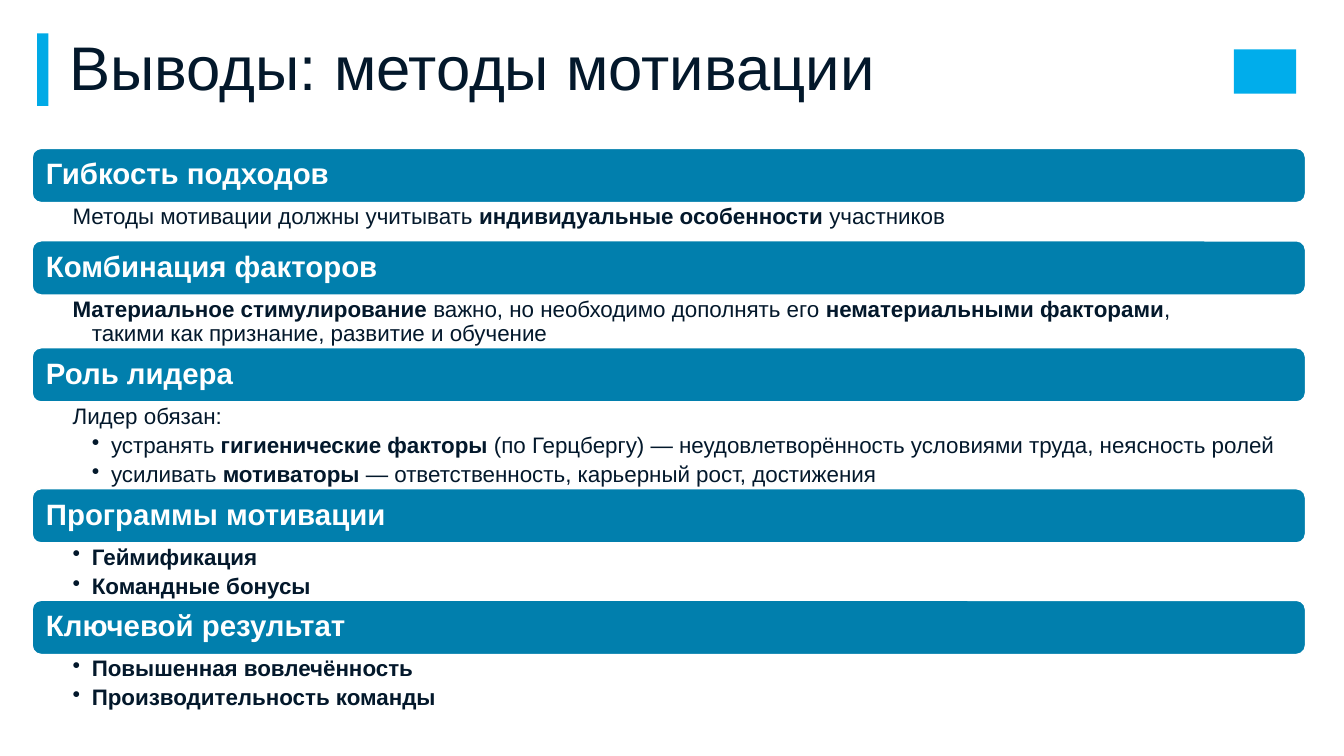
from dataclasses import dataclass

import pptx
import pptx.dml.color
import pptx.enum.shapes
import pptx.enum.text
import pptx.oxml.ns
import pptx.util
from lxml import etree

Pt = pptx.util.Pt
qn = pptx.oxml.ns.qn
RGB = pptx.dml.color.RGBColor.from_string
SHAPE = pptx.enum.shapes.MSO_SHAPE
ANCHOR = pptx.enum.text.MSO_ANCHOR
ALIGN = pptx.enum.text.PP_ALIGN


@dataclass(frozen=True)
class Theme:
    font: str = "Arial"
    ink: str = "03182B"
    white: str = "FFFFFF"
    bar: str = "017FAD"
    accent: str = "00AAE6"
    mark: str = "00ADEB"
    title_size: int = 44
    heading_size: int = 21
    body_size: int = 16


theme = Theme()

LEFT, WIDTH = 23, 909.5
TOP, BAR_HEIGHT = 106, 38.7
STEP = 13.7  # indent of one outline level

# Heading, body height, paragraphs as (level, bulleted, text); *...* is bold
SECTIONS = [
    ("Гибкость подходов", 27.3, [
        (1, False, "Методы мотивации должны учитывать *индивидуальные особенности* участников"),
    ]),
    ("Комбинация факторов", 37.7, [
        (1, False, "*Материальное стимулирование* важно, но необходимо дополнять его "
                   "*нематериальными факторами*, \nтакими как признание, развитие и обучение"),
    ]),
    ("Роль лидера", 62, [
        (1, False, "Лидер обязан:"),
        (2, True, "устранять *гигиенические факторы* (по Герцбергу) — "
                  "неудовлетворённость условиями труда, неясность ролей"),
        (2, True, "усиливать *мотиваторы* — ответственность, карьерный рост, достижения"),
    ]),
    ("Программы мотивации", 41, [
        (1, True, "*Геймификация*"),
        (1, True, "*Командные бонусы*"),
    ]),
    ("Ключевой результат", 41, [
        (1, True, "*Повышенная вовлечённость*"),
        (1, True, "*Производительность команды*"),
    ]),
]


def set_frame(tf, left, top, right, bottom, anchor):
    tf.word_wrap = True
    tf.vertical_anchor = anchor
    tf.margin_left, tf.margin_top = Pt(left), Pt(top)
    tf.margin_right, tf.margin_bottom = Pt(right), Pt(bottom)


def style_runs(p, size, color):
    p.alignment = ALIGN.LEFT
    p.line_spacing = 0.9
    for r in p.runs:
        r.font.name = theme.font
        r.font.size = Pt(size)
        r.font.color.rgb = RGB(color)


prs = pptx.Presentation()
prs.slide_width, prs.slide_height = Pt(960), Pt(540)
s = prs.slides.add_slide(prs.slide_layouts[6])

# Title accent and corner mark
for x, y, w, h, color in [(26.6, 23.8, 8, 51.8, theme.accent),
                          (881.3, 35.3, 44.6, 31.7, theme.mark)]:
    sp = s.shapes.add_shape(SHAPE.RECTANGLE, Pt(x), Pt(y), Pt(w), Pt(h))
    sp.shadow.inherit = False
    sp.fill.solid()
    sp.fill.fore_color.rgb = RGB(color)
    sp.line.fill.background()

tf = s.shapes.add_textbox(Pt(49.7), Pt(26.6), Pt(723), Pt(48.2)).text_frame
set_frame(tf, 0, 0, 0, 0, ANCHOR.MIDDLE)
tf.text = "Выводы: методы мотивации"
style_runs(tf.paragraphs[0], theme.title_size, theme.ink)

y = TOP
for heading, body_height, paragraphs in SECTIONS:
    sp = s.shapes.add_shape(SHAPE.ROUNDED_RECTANGLE, Pt(LEFT), Pt(y), Pt(WIDTH), Pt(BAR_HEIGHT))
    sp.shadow.inherit = False
    sp.fill.solid()
    sp.fill.fore_color.rgb = RGB(theme.bar)
    sp.line.color.rgb = RGB(theme.white)
    sp.line.width = Pt(1)
    tf = sp.text_frame
    set_frame(tf, 8, 6.5, 8, 6.5, ANCHOR.MIDDLE)
    tf.text = heading
    style_runs(tf.paragraphs[0], theme.heading_size, theme.white)
    tf.paragraphs[0].runs[0].font.bold = True
    y += BAR_HEIGHT

    tf = s.shapes.add_textbox(Pt(LEFT), Pt(y), Pt(WIDTH), Pt(body_height)).text_frame
    set_frame(tf, 28.9, 2, 11.5, 2, ANCHOR.TOP)
    for i, (level, bulleted, text) in enumerate(paragraphs):
        p = tf.add_paragraph() if i else tf.paragraphs[0]
        for j, chunk in enumerate(text.split("*")):
            for k, line in enumerate(chunk.split("\n")):
                if k:
                    p.add_line_break()
                if line:
                    r = p.add_run()
                    r.text = line
                    r.font.bold = j % 2 == 1
        style_runs(p, theme.body_size, theme.ink)
        for br in p._p.findall(qn("a:br")):
            etree.SubElement(br, qn("a:rPr"), sz=str(theme.body_size * 100))
        p.level = level
        p.space_after = Pt(3.7)
        pPr = p._p.get_or_add_pPr()
        pPr.set("marL", str(Pt(STEP * level)))
        pPr.set("indent", str(Pt(-STEP)))
        if bulleted:
            etree.SubElement(pPr, qn("a:buChar"), char="•")
        else:
            etree.SubElement(pPr, qn("a:buNone"))
    y += body_height

prs.save("out.pptx")
